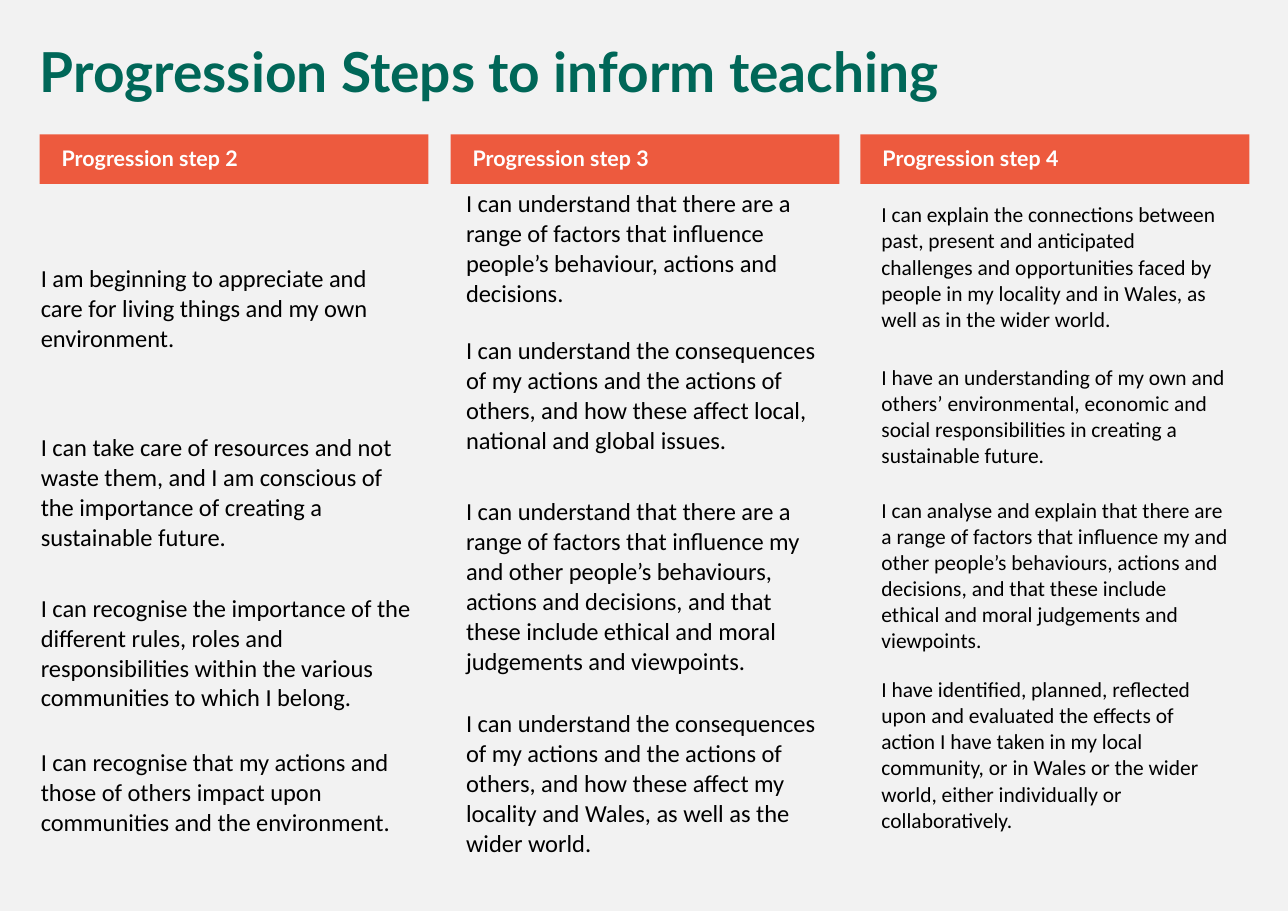
from pptx import Presentation
from pptx.dml.color import RGBColor
from pptx.enum import shapes, text
from pptx.util import Inches, Pt

GREY = RGBColor(0xF2, 0xF2, 0xF2)
ORANGE = RGBColor(0xED, 0x5A, 0x3E)
GREEN = RGBColor(0x00, 0x67, 0x58)
WHITE = RGBColor(0xFF, 0xFF, 0xFF)
BLACK = RGBColor(0x00, 0x00, 0x00)
NO_STYLE_NO_GRID = "{2D5ABB26-0587-4C30-8999-92F81FD0307C}"

# Heading left; table left, top, width; text size; (row height, statement)
STEPS = [
    ("Progression step 2", 0.36, (0.27, 1.78, 3.57), 16, [
        (2.05, "I am beginning to appreciate and care for living things and my own environment."),
        (1.3, "I can take care of resources and not waste them, and I am conscious of the "
              "importance of creating a sustainable future."),
        (1.61, "I can recognise the importance of the different rules, roles and "
               "responsibilities within the various communities to which I belong."),
        (0.88, "I can recognise that my actions and those of others impact upon communities "
               "and the environment."),
    ]),
    ("Progression step 3", 4.09, (4.13, 1.67, 3.49), 16, [
        (1.07, "I can understand that there are a range of factors that influence people’s "
               "behaviour, actions and decisions."),
        (1.48, "I can understand the consequences of my actions and the actions of others, "
               "and how these affect local, national and global issues."),
        (1.99, "I can understand that there are a range of factors that influence my and "
               "other people’s behaviours, actions and decisions, and that "
               "these include ethical and moral judgements and viewpoints."),
        (1.58, "I can understand the consequences of my actions and the actions of others, "
               "and how these affect my locality and Wales, as well as the wider world."),
    ]),
    ("Progression step 4", 7.81, (7.9, 1.66, 3.35), 14, [
        (1.54, "I can explain the connections between past, present and anticipated "
               "challenges and opportunities faced by people in my locality and in Wales, "
               "as well as in the wider world."),
        (1.17, "I have an understanding of my own and others’ environmental, economic and "
               "social responsibilities in creating a sustainable future."),
        (1.72, "I can analyse and explain that there are a range of factors that influence "
               "my and other people’s behaviours, actions and decisions, and that "
               "these include ethical and moral judgements and viewpoints."),
        (1.54, "I have identified, planned, reflected upon and evaluated the effects of "
               "action I have taken in my local community, or in Wales or the wider world, "
               "either individually or collaboratively."),
    ]),
]


class ProgressionSlide:
    heading_font = "Lato"
    body_font = "Calibri"

    def __init__(self, presentation):
        self.slide = presentation.slides.add_slide(presentation.slide_layouts[5])
        fill = self.slide.background.fill
        fill.solid()
        fill.fore_color.rgb = GREY

    def set_text(self, frame, words, name, size, color, bold=False):
        frame.text = words
        frame.word_wrap = True
        paragraph = frame.paragraphs[0]
        paragraph.alignment = text.PP_ALIGN.LEFT
        font = paragraph.font
        font.name, font.size, font.bold = name, Pt(size), bold
        font.color.rgb = color
        return paragraph

    def title(self, words):
        shape = self.slide.shapes.title
        shape.left, shape.top = Inches(0.26), Inches(0.36)
        shape.width, shape.height = Inches(11.08), Inches(0.65)
        frame = shape.text_frame
        self.set_text(frame, words, self.heading_font, 36, GREEN, True).line_spacing = 0.9
        frame.auto_size = text.MSO_AUTO_SIZE.NONE
        frame.vertical_anchor = text.MSO_ANCHOR.TOP

    def heading(self, words, left):
        shape = self.slide.shapes.add_shape(
            shapes.MSO_SHAPE.RECTANGLE, Inches(left), Inches(1.22), Inches(3.53), Inches(0.45))
        shape.shadow.inherit = False
        shape.fill.solid()
        shape.fill.fore_color.rgb = ORANGE
        shape.line.fill.background()
        frame = shape.text_frame
        frame.margin_left = Inches(0.2)
        frame.vertical_anchor = text.MSO_ANCHOR.MIDDLE
        self.set_text(frame, words, self.heading_font, 14, WHITE, True).line_spacing = 0.9

    def statements(self, left, top, width, size, rows):
        height = sum(row_height for row_height, _ in rows)
        table = self.slide.shapes.add_table(
            len(rows), 1, Inches(left), Inches(top), Inches(width), Inches(height)).table
        table.first_row = table.horz_banding = False
        table._tbl.tblPr.find("{*}tableStyleId").text = NO_STYLE_NO_GRID
        for index, (row_height, words) in enumerate(rows):
            table.rows[index].height = Inches(row_height)
            cell = table.cell(index, 0)
            cell.fill.background()
            cell.vertical_anchor = text.MSO_ANCHOR.MIDDLE
            self.set_text(cell.text_frame, words, self.body_font, size, BLACK)


def main():
    presentation = Presentation()
    presentation.slide_width = Inches(11.69)
    presentation.slide_height = Inches(8.27)
    page = ProgressionSlide(presentation)
    page.title("Progression Steps to inform teaching")
    for heading, heading_left, place, size, rows in STEPS:
        page.heading(heading, heading_left)
        page.statements(*place, size, rows)
    presentation.save("out.pptx")


if __name__ == "__main__":
    main()
